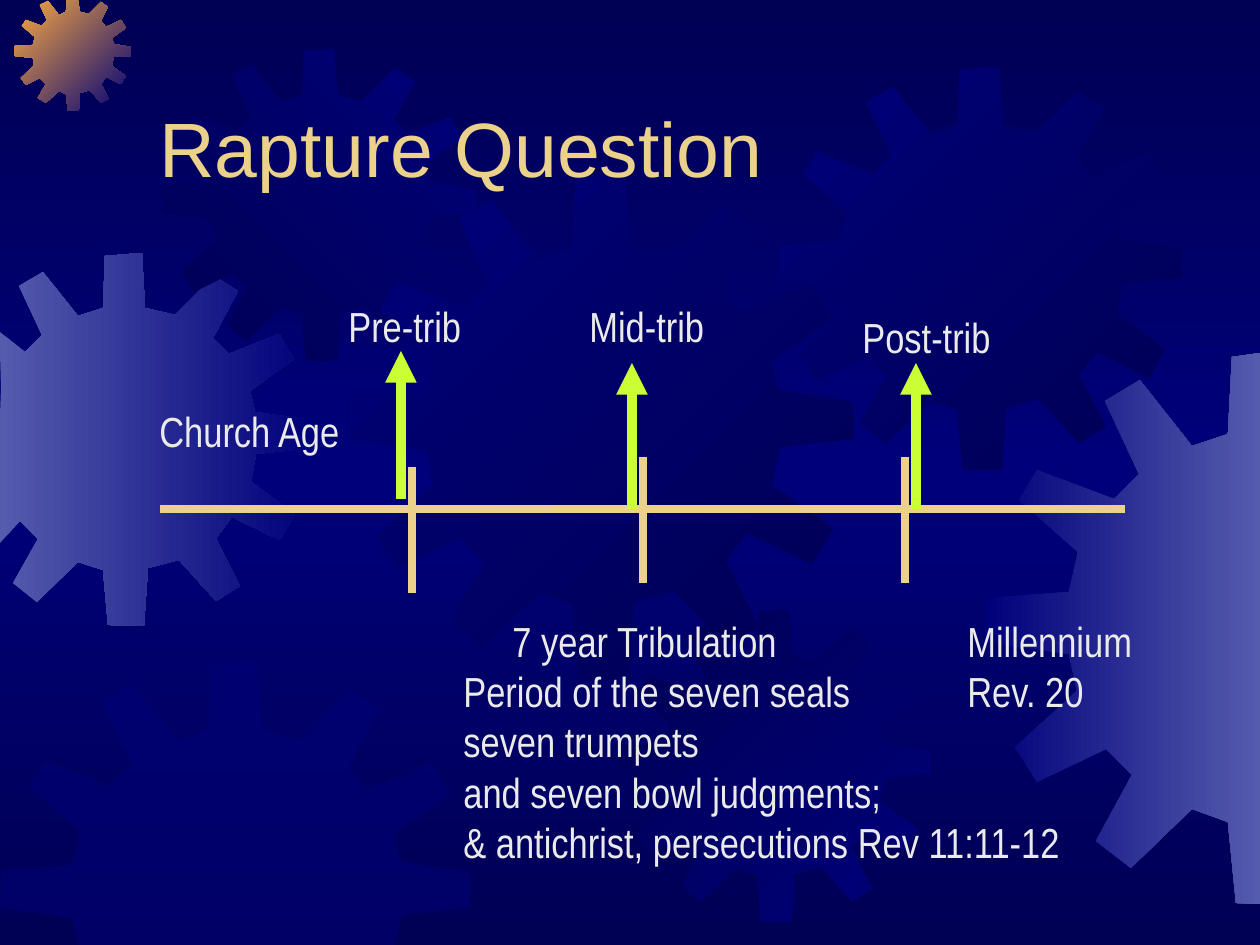
from copy import deepcopy
from dataclasses import dataclass

from lxml import etree
from pptx import Presentation
from pptx.dml.color import RGBColor
from pptx.enum.shapes import MSO_CONNECTOR
from pptx.enum.text import MSO_ANCHOR
from pptx.oxml.ns import qn
from pptx.util import Pt

STRAIGHT = MSO_CONNECTOR.STRAIGHT
BOTTOM = MSO_ANCHOR.BOTTOM
TOP = MSO_ANCHOR.TOP
EMU_PER_PX = 914400 / 126
SLIDE_W, SLIDE_H = 1260, 945


@dataclass(frozen=True)
class Theme:
    navy: str = "000054"
    blue: str = "00007A"
    haze: str = "555BAD"
    orange: str = "FCAB40"
    gold: str = "EBD189"
    lime: str = "CCFF33"
    text: str = "EAEAEA"
    title_font: str = "Arial"
    body_font: str = "Arial Narrow"
    title_size: float = 44
    body_size: float = 24
    axis_width: float = 4.5
    arrow_width: float = 6


THEME = Theme()

GEAR_SPAN = 401
GEAR_OUTLINE = [
    (255, 67), (223, 59), (219, 0), (180, 3), (177, 59), (151, 68),
    (113, 20), (87, 35), (112, 88), (94, 106), (38, 85), (25, 107),
    (68, 145), (61, 174), (1, 178), (0, 210), (61, 219), (67, 246),
    (22, 287), (38, 312), (88, 288), (107, 307), (81, 355), (106, 375),
    (151, 332), (177, 341), (183, 400), (222, 401), (226, 339), (259, 330),
    (299, 374), (325, 358), (299, 306), (316, 284), (368, 309), (384, 281),
    (336, 246), (342, 216), (401, 210), (400, 180), (341, 171), (335, 148),
    (383, 114), (367, 87), (313, 109), (296, 91), (323, 41), (297, 25),
]


def emu(px):
    return round(px * EMU_PER_PX)


def rgb(color):
    return RGBColor.from_string(color)


def paint_stops(fill, colors, clockwise):
    fill.gradient_angle = (360 - clockwise) % 360
    for index, (stop, color) in enumerate(zip(fill.gradient_stops, colors)):
        stop.position = index / (len(colors) - 1)
        stop.color.rgb = rgb(color)


def paint_background(slide):
    fill = slide.background.fill
    fill.gradient()
    last_stop = slide.element.xpath(".//p:bgPr//a:gs")[-1]
    last_stop.addnext(deepcopy(last_stop))
    paint_stops(fill, [THEME.navy, THEME.blue, THEME.navy], 90)


def add_gear(slide, left, top, size, colors, clockwise=0):
    ratio = size / GEAR_SPAN
    rim = [
        (min(max(round(left + x * ratio), 0), SLIDE_W),
         min(max(round(top + y * ratio), 0), SLIDE_H))
        for x, y in GEAR_OUTLINE
    ]
    builder = slide.shapes.build_freeform(*rim[0], scale=EMU_PER_PX)
    builder.add_line_segments(rim[1:], close=True)
    gear = builder.convert_to_shape()
    gear.shadow.inherit = False
    gear.line.fill.background()
    if len(colors) > 1:
        gear.fill.gradient()
        paint_stops(gear.fill, colors, clockwise)
    else:
        gear.fill.solid()
        gear.fill.fore_color.rgb = rgb(colors[0])
        tint = gear.element.xpath("./p:spPr/a:solidFill/a:srgbClr")[0]
        etree.SubElement(tint, qn("a:alpha")).set("val", "50000")


def add_gears(slide):
    rising = [THEME.navy, THEME.blue]
    falling = [THEME.blue, THEME.navy]
    add_gear(slide, -62, 253, 373, [THEME.haze, THEME.blue])
    add_gear(slide, 15, -5, 116, [THEME.orange, THEME.blue], 45)
    add_gear(slide, 164, 49, 312, rising, 315)
    add_gear(slide, 349, 175, 505, falling, 45)
    add_gear(slide, 0, 661, 471, [THEME.blue])
    add_gear(slide, 619, 610, 312, rising, 45)
    add_gear(slide, 779, 67, 403, falling, 45)
    add_gear(slide, 985, 353, 551, [THEME.blue, THEME.haze])


def add_text(slide, box, lines, font, size, color, wrap=False, anchor=TOP, first_indent=0):
    frame = slide.shapes.add_textbox(*map(emu, box)).text_frame
    frame.word_wrap = wrap
    frame.vertical_anchor = anchor
    for index, line in enumerate(lines):
        paragraph = frame.add_paragraph() if index else frame.paragraphs[0]
        if first_indent and index == 0:
            paragraph._p.get_or_add_pPr().set("marL", str(emu(first_indent)))
        run = paragraph.add_run()
        run.text = line
        run.font.name = font
        run.font.size = Pt(size)
        run.font.color.rgb = rgb(color)


def add_line(slide, start, end, color, width, arrow=False):
    line = slide.shapes.add_connector(STRAIGHT, *map(emu, (*start, *end)))
    line.line.color.rgb = rgb(color)
    line.line.width = Pt(width)
    if arrow:
        etree.SubElement(line.line._get_or_add_ln(), qn("a:tailEnd")).set("type", "triangle")
    etree.SubElement(line.element.spPr, qn("a:effectLst"))


def add_title(slide, box):
    add_text(slide, box, ["Rapture Question"], THEME.title_font, THEME.title_size,
             THEME.gold, wrap=True, anchor=BOTTOM)


def add_timeline(slide, left, top):
    axis_y = top + 215
    add_line(slide, (left + 13, axis_y), (left + 978, axis_y), THEME.gold, THEME.axis_width)
    for x, y in [(265, 173), (496, 163), (758, 163)]:
        add_line(slide, (left + x, top + y), (left + x, top + y + 126),
                 THEME.gold, THEME.axis_width)
    for x, tail, tip in [(254, 205, 57), (485, 215, 69), (769, 215, 69)]:
        add_line(slide, (left + x, top + tail), (left + x, top + tip),
                 THEME.lime, THEME.arrow_width, arrow=True)

    tribulation = [
        "7 year Tribulation",
        "Period of the seven seals",
        "seven trumpets",
        "and seven bowl judgments;",
        "& antichrist, persecutions Rev 11:11-12",
    ]
    labels = [
        ((0, 105, 208, 63), ["Church Age"], 0),
        ((304, 315, 630, 267), tribulation, 49),
        ((808, 315, 192, 115), ["Millennium", "Rev. 20"], 0),
        ((189, 0, 140, 63), ["Pre-trib"], 0),
        ((430, 0, 140, 63), ["Mid-trib"], 0),
        ((703, 11, 154, 63), ["Post-trib"], 0),
    ]
    for (x, y, width, height), lines, indent in labels:
        add_text(slide, (left + x, top + y, width, height), lines, THEME.body_font,
                 THEME.body_size, THEME.text, first_indent=indent)


def main():
    deck = Presentation()
    deck.slide_width, deck.slide_height = emu(SLIDE_W), emu(SLIDE_H)
    slide = deck.slides.add_slide(deck.slide_layouts[6])
    paint_background(slide)
    add_gears(slide)
    add_title(slide, (147, 42, 1071, 157))
    add_timeline(slide, 147, 294)
    deck.save("out.pptx")


if __name__ == "__main__":
    main()
